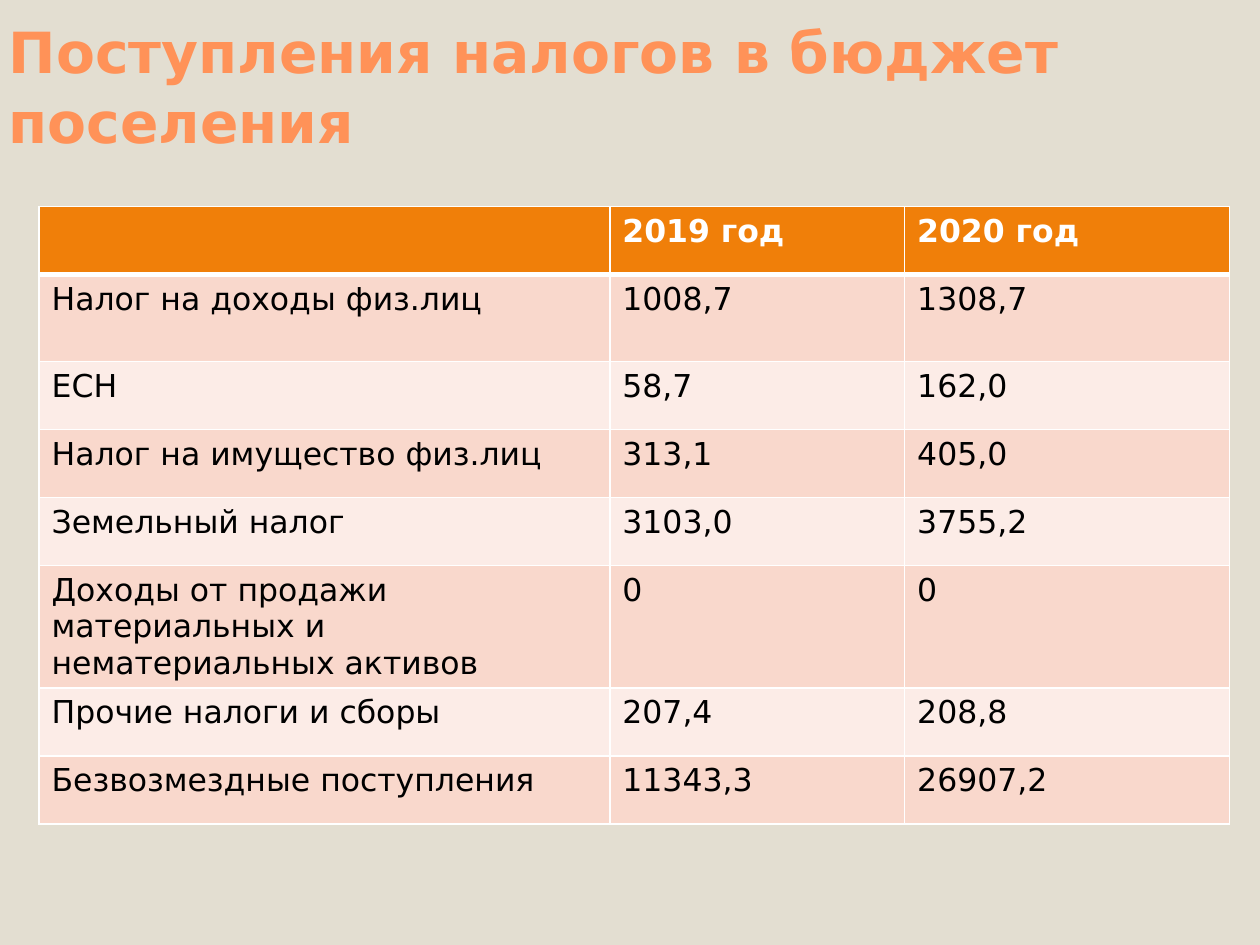
from typing import NamedTuple

from lxml import etree
from pptx import Presentation
from pptx.dml.color import RGBColor
from pptx.enum.text import MSO_ANCHOR, MSO_AUTO_SIZE
from pptx.oxml.ns import qn
from pptx.util import Inches, Pt

BOTTOM = MSO_ANCHOR.BOTTOM
NO_AUTOFIT = MSO_AUTO_SIZE.NONE
TITLE_ONLY = 5
FONT = "DejaVu Sans"
WHITE, BLACK = "FFFFFF", "000000"
BACKGROUND, TITLE_COLOR = "E3DED1", "FF9258"
HEADER_FILL, BANDS = "F07F09", ("F9D8CC", "FCECE7")
COLUMN_WIDTHS = (4.53, 2.34, 2.58)
ROW_HEIGHT, FIRST_ROW_HEIGHT = 0.54, 0.69


class TaxRow(NamedTuple):
    name: str
    year_2019: str
    year_2020: str


HEADER = TaxRow("", "2019 год", "2020 год")
TAXES = [
    TaxRow("Налог на доходы физ.лиц", "1008,7", "1308,7"),
    TaxRow("ЕСН", "58,7", "162,0"),
    TaxRow("Налог на имущество физ.лиц", "313,1", "405,0"),
    TaxRow("Земельный налог", "3103,0", "3755,2"),
    TaxRow("Доходы от продажи материальных и нематериальных активов", "0", "0"),
    TaxRow("Прочие налоги и сборы", "207,4", "208,8"),
    TaxRow("Безвозмездные поступления", "11343,3", "26907,2"),
]


def rgb(color: str) -> RGBColor:
    return RGBColor.from_string(color)


def write(tf, text: str, *, size: float, color: str, bold: bool = False) -> None:
    p = tf.paragraphs[0]
    p.font.size = Pt(size)
    if not text:
        return
    r = p.add_run()
    r.text = text
    r.font.name = FONT
    r.font.size = Pt(size)
    r.font.bold = bold
    r.font.color.rgb = rgb(color)


def set_borders(cell, **widths: float) -> None:
    """Draw white borders; keys are lnL, lnR, lnT and lnB, in points."""
    tc_pr = cell._tc.get_or_add_tcPr()
    for i, (side, width) in enumerate(widths.items()):
        ln = etree.Element(qn(f"a:{side}"), w=str(Pt(width)))
        fill = etree.SubElement(ln, qn("a:solidFill"))
        etree.SubElement(fill, qn("a:srgbClr"), val=WHITE)
        tc_pr.insert(i, ln)


def add_title(slide, text: str) -> None:
    title = slide.shapes.title
    title.left, title.top = Inches(0), Inches(0.25)
    title.width, title.height = Inches(9.77), Inches(1)
    tf = title.text_frame
    tf.word_wrap = True
    tf.auto_size = NO_AUTOFIT
    tf.vertical_anchor = BOTTOM
    tf.margin_left = tf.margin_right = Inches(0.07)
    tf.margin_top, tf.margin_bottom = Inches(0), Inches(0.02)
    write(tf, text, size=32.4, color=TITLE_COLOR, bold=True)
    p = tf.paragraphs[0]
    p.alignment = 1
    p.line_spacing = 1.03


def add_tax_table(slide, rows: list[TaxRow]) -> None:
    heights = [ROW_HEIGHT] * len(rows)
    heights[1] = FIRST_ROW_HEIGHT
    table = slide.shapes.add_table(
        len(rows), len(COLUMN_WIDTHS), Inches(0.31), Inches(1.64),
        Inches(sum(COLUMN_WIDTHS)), Inches(sum(heights))).table
    for column, width in zip(table.columns, COLUMN_WIDTHS):
        column.width = Inches(width)
    for i, row in enumerate(rows):
        table.rows[i].height = Inches(heights[i])
        header = i == 0
        for j, text in enumerate(row):
            cell = table.cell(i, j)
            cell.fill.solid()
            cell.fill.fore_color.rgb = rgb(HEADER_FILL if header else BANDS[(i - 1) % 2])
            write(cell.text_frame, text, size=18,
                  color=WHITE if header else BLACK, bold=header)
            set_borders(cell, lnL=1, lnR=1, lnT=3 if i == 1 else 1,
                        lnB=3 if header else 1)


def main() -> None:
    prs = Presentation()
    prs.slide_width, prs.slide_height = Inches(10), Inches(7.5)
    slide = prs.slides.add_slide(prs.slide_layouts[TITLE_ONLY])
    slide.background.fill.solid()
    slide.background.fill.fore_color.rgb = rgb(BACKGROUND)
    add_title(slide, "Поступления налогов в бюджет поселения")
    add_tax_table(slide, [HEADER, *TAXES])
    prs.save("out.pptx")


if __name__ == "__main__":
    main()
